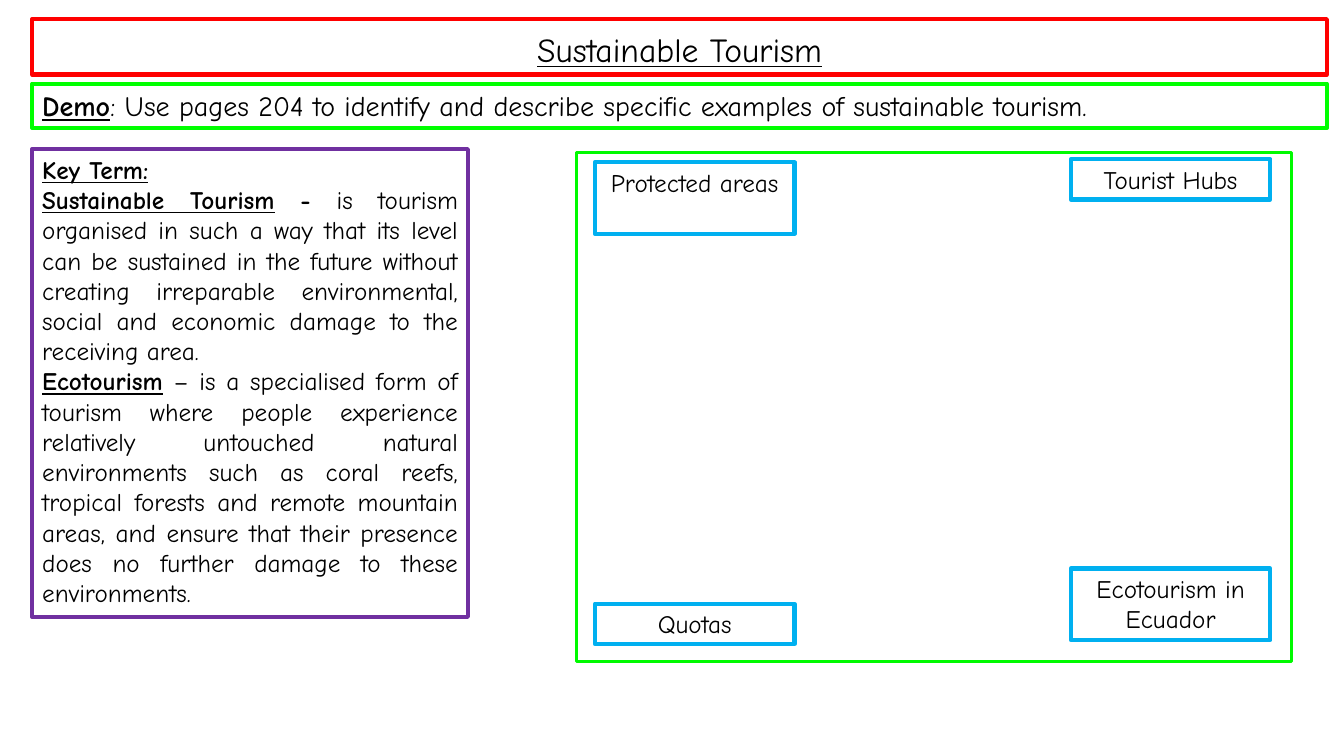
from collections import namedtuple

from pptx import Presentation
from pptx.dml.color import RGBColor
from pptx.enum.shapes import MSO_SHAPE
from pptx.enum.text import MSO_ANCHOR, MSO_AUTO_SIZE, PP_ALIGN
from pptx.util import Inches, Pt

RECTANGLE = MSO_SHAPE.RECTANGLE
TOP, BOTTOM = MSO_ANCHOR.TOP, MSO_ANCHOR.BOTTOM
LEFT, CENTER, JUSTIFY = PP_ALIGN.LEFT, PP_ALIGN.CENTER, PP_ALIGN.JUSTIFY
FIXED_SIZE = MSO_AUTO_SIZE.NONE
TITLE_ONLY = 5

FONT = "Comic Neue"
COLORS = {
    "text": "000000",
    "title": "FF0000",
    "task": "00FF00",
    "terms": "7030A0",
    "examples": "00FA00",
    "label": "00B0F0",
}

# Lengths in inches
SLIDE_W, SLIDE_H = 13.33, 7.5
MARGIN = 0.32
BANNER_W = 12.84
LABEL_W, ONE_LINE, TWO_LINES = 1.98, 0.4, 0.71

Box = namedtuple("Box", "left top width height")
# A run is its text, bold, underlined
Run = namedtuple("Run", "text bold underline", defaults=(False, False))

TITLE = [[Run("Sustainable Tourism", underline=True)]]
TASK = [[
    Run("Demo", True, True),
    Run(": Use pages 204 to identify and describe specific examples of "
        "sustainable tourism."),
]]
KEY_TERMS = [
    [Run("Key Term:", True, True)],
    [
        Run("Sustainable Tourism", True, True),
        Run(" - ", True),
        Run("is tourism organised in such a way that its level can be "
            "sustained in the future without creating irreparable "
            "environmental, social and economic damage to the receiving area."),
    ],
    [
        Run("Ecotourism", True, True),
        Run(" – is a specialised form of tourism where people experience "
            "relatively untouched natural environments such as coral reefs, "
            "tropical forests and remote mountain areas, and ensure that "
            "their presence does no further damage to these environments. "),
    ],
]


def place(shape, box):
    shape.left, shape.top, shape.width, shape.height = map(Inches, box)


def outline(shape, color, width=3):
    shape.fill.background()
    shape.line.color.rgb = RGBColor.from_string(COLORS[color])
    shape.line.width = Pt(width)


def write(frame, paragraphs, size, align, anchor=TOP, spacing=1.0):
    frame.word_wrap = True
    frame.auto_size = FIXED_SIZE
    frame.vertical_anchor = anchor
    for index, runs in enumerate(paragraphs):
        paragraph = frame.add_paragraph() if index else frame.paragraphs[0]
        paragraph.alignment = align
        paragraph.line_spacing = spacing
        for part in runs:
            run = paragraph.add_run()
            run.text = part.text
            run.font.name = FONT
            run.font.size = Pt(size)
            run.font.bold = part.bold
            run.font.underline = part.underline
            run.font.color.rgb = RGBColor.from_string(COLORS["text"])


def add_title(slide, box):
    title = slide.shapes.title
    place(title, box)
    outline(title, "title")
    write(title.text_frame, TITLE, 24, CENTER, BOTTOM, 0.9)


def add_framed_text(slide, box, color, paragraphs, size, align):
    framed = slide.shapes.add_textbox(*map(Inches, box))
    outline(framed, color)
    write(framed.text_frame, paragraphs, size, align)


def add_examples(slide, box):
    """Empty writing area with a topic label near each corner."""
    area = slide.shapes.add_shape(RECTANGLE, *map(Inches, box))
    area.shadow.inherit = False
    outline(area, "examples", 2.25)

    left = box.left + 0.18
    right = box.left + box.width - 0.21 - LABEL_W
    bottom = box.top + box.height
    labels = [
        ("Protected areas", left, box.top + 0.1, TWO_LINES),
        ("Tourist Hubs", right, box.top + 0.07, ONE_LINE),
        ("Quotas", left, bottom - 0.17 - ONE_LINE, ONE_LINE),
        ("Ecotourism in Ecuador", right, bottom - 0.21 - TWO_LINES, TWO_LINES),
    ]
    for topic, x, y, height in labels:
        add_framed_text(slide, Box(x, y, LABEL_W, height), "label",
                        [[Run(topic)]], 18, CENTER)


def main():
    deck = Presentation()
    deck.slide_width, deck.slide_height = Inches(SLIDE_W), Inches(SLIDE_H)
    slide = deck.slides.add_slide(deck.slide_layouts[TITLE_ONLY])

    # Banners across the top
    add_title(slide, Box(MARGIN, 0.19, BANNER_W, 0.55))
    add_framed_text(slide, Box(MARGIN, 0.83, BANNER_W, 0.44), "task",
                    TASK, 20, LEFT)
    # Definitions on the left, examples on the right
    add_framed_text(slide, Box(MARGIN, 1.48, 4.32, 4.64), "terms",
                    KEY_TERMS, 18, JUSTIFY)
    add_examples(slide, Box(5.72, 1.51, 7.09, 5.05))

    deck.save("out.pptx")


if __name__ == "__main__":
    main()
